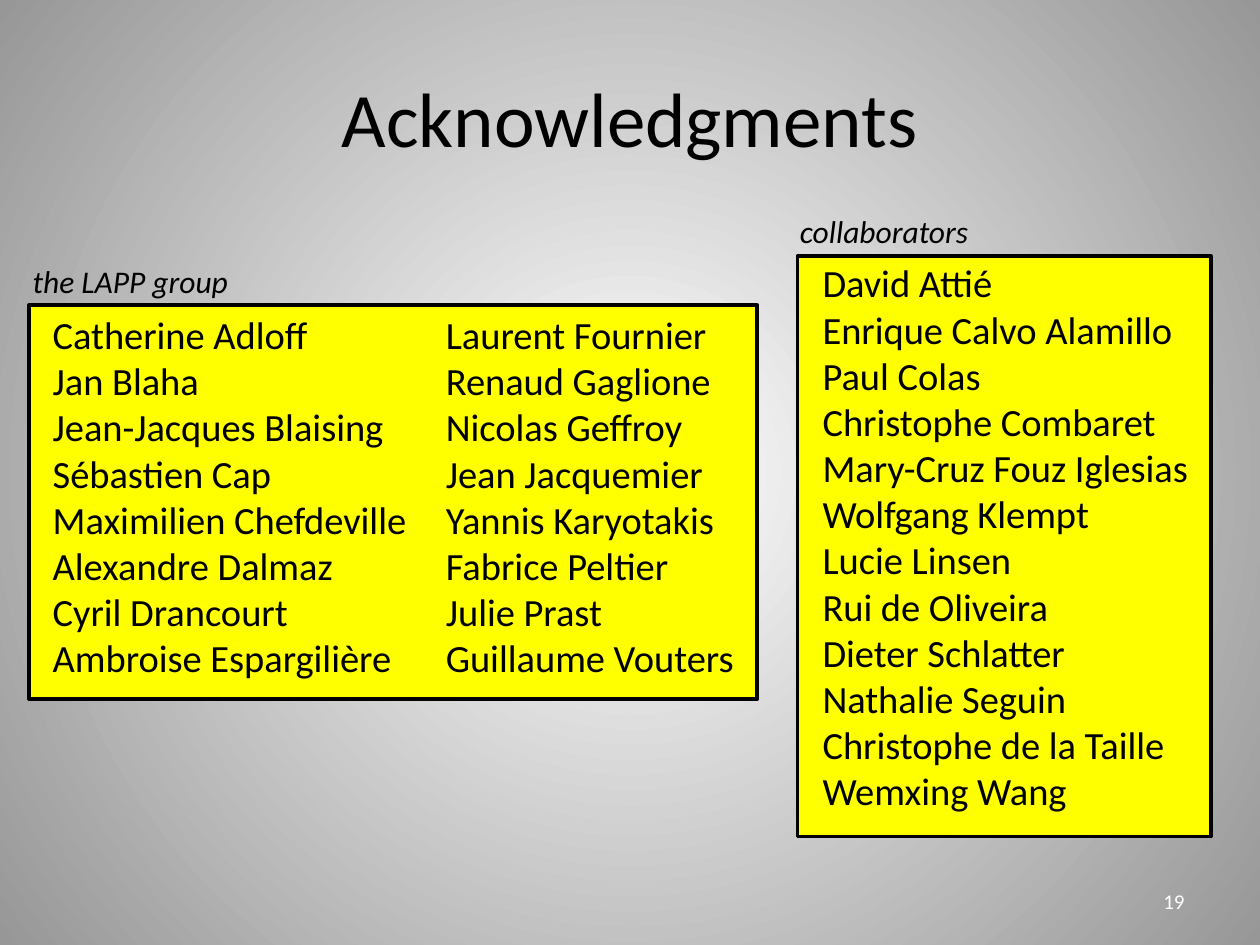
from dataclasses import dataclass

from lxml import etree
from pptx import Presentation
from pptx.dml.color import RGBColor
from pptx.enum import shapes, text
from pptx.oxml import ns
from pptx.util import Inches, Pt


@dataclass(frozen=True)
class Theme:
    font: str = "Calibri"
    ink: str = "000000"
    panel: str = "FFFF00"
    page_number: str = "FFFFFF"
    glow: str = "FFFFFF"
    edge: str = "979797"
    title_size: int = 44
    name_size: int = 22
    caption_size: int = 18
    number_size: int = 12
    border: int = 2


THEME = Theme()

PANELS = [(0.23, 2.42, 5.78, 3.13), (6.33, 2.03, 3.28, 4.61)]
CAPTIONS = [
    ("the LAPP group", (0.16, 2.03, 2.19, 0.4)),
    ("collaborators", (6.25, 1.63, 2.19, 0.4)),
]
NAME_COLUMNS = [
    ((0.32, 2.42, 3.04, 3.06), [
        "Catherine Adloff", "Jan Blaha", "Jean-Jacques Blaising",
        "Sébastien Cap", "Maximilien Chefdeville", "Alexandre Dalmaz",
        "Cyril Drancourt", "Ambroise Espargilière",
    ]),
    ((3.44, 2.42, 2.51, 3.06), [
        "Laurent Fournier", "Renaud Gaglione", "Nicolas Geffroy",
        "Jean Jacquemier", "Yannis Karyotakis", "Fabrice Peltier",
        "Julie Prast", "Guillaume Vouters",
    ]),
    ((6.43, 2.01, 3.14, 4.54), [
        "David Attié", "Enrique Calvo Alamillo", "Paul Colas",
        "Christophe Combaret", "Mary-Cruz Fouz Iglesias",
        "Wolfgang Klempt", "Lucie Linsen", "Rui de Oliveira",
        "Dieter Schlatter", "Nathalie Seguin", "Christophe de la Taille",
        "Wemxing Wang",
    ]),
]


def inches(box):
    return [Inches(length) for length in box]


def rgb(value):
    return RGBColor.from_string(value)


def set_background(slide):
    """Fill the slide with a circular gradient spreading from its centre."""
    fill = slide.background.fill
    fill.gradient()
    for stop, color in zip(fill.gradient_stops, (THEME.glow, THEME.edge)):
        stop.color.rgb = rgb(color)
    linear = slide.element.find(".//" + ns.qn("a:lin"))
    circle = etree.Element(ns.qn("a:path"), path="circle")
    centre = dict.fromkeys("ltrb", "50000")
    etree.SubElement(circle, ns.qn("a:fillToRect"), centre)
    linear.getparent().replace(linear, circle)


def write_lines(frame, lines, size, color=THEME.ink, italic=None, align=None):
    frame.text = "\n".join(lines)
    for paragraph in frame.paragraphs:
        paragraph.alignment = align
        font = paragraph.font
        font.name = THEME.font
        font.size = Pt(size)
        font.italic = italic
        font.color.rgb = rgb(color)


def add_title(slide, title):
    holder = slide.shapes.title
    holder.left, holder.top, holder.width, holder.height = inches(
        (0.5, 0.3, 9, 1.25))
    holder.text_frame.vertical_anchor = text.MSO_ANCHOR.MIDDLE
    write_lines(holder.text_frame, [title], THEME.title_size,
                align=text.PP_ALIGN.CENTER)


def add_panel(slide, box):
    panel = slide.shapes.add_shape(
        shapes.MSO_SHAPE.RECTANGLE, *inches(box))
    panel.shadow.inherit = False
    panel.fill.solid()
    panel.fill.fore_color.rgb = rgb(THEME.panel)
    panel.line.color.rgb = rgb(THEME.ink)
    panel.line.width = Pt(THEME.border)


def add_text(slide, box, lines, size, wrap=True, **style):
    frame = slide.shapes.add_textbox(*inches(box)).text_frame
    frame.word_wrap = wrap
    write_lines(frame, lines, size, **style)
    return frame


def add_page_number(slide, number):
    frame = add_text(slide, (7.17, 6.95, 2.33, 0.4), [str(number)],
                     THEME.number_size, color=THEME.page_number,
                     align=text.PP_ALIGN.RIGHT)
    frame.vertical_anchor = text.MSO_ANCHOR.MIDDLE


def main():
    deck = Presentation()
    deck.slide_width, deck.slide_height = Inches(10), Inches(7.5)
    slide = deck.slides.add_slide(deck.slide_layouts.get_by_name("Title Only"))
    set_background(slide)
    for box in PANELS:
        add_panel(slide, box)
    add_title(slide, "Acknowledgments")
    add_page_number(slide, 19)
    for box, names in NAME_COLUMNS:
        add_text(slide, box, names, THEME.name_size, wrap=False)
    for caption, box in CAPTIONS:
        add_text(slide, box, [caption], THEME.caption_size, italic=True)
    deck.save("out.pptx")


if __name__ == "__main__":
    main()
